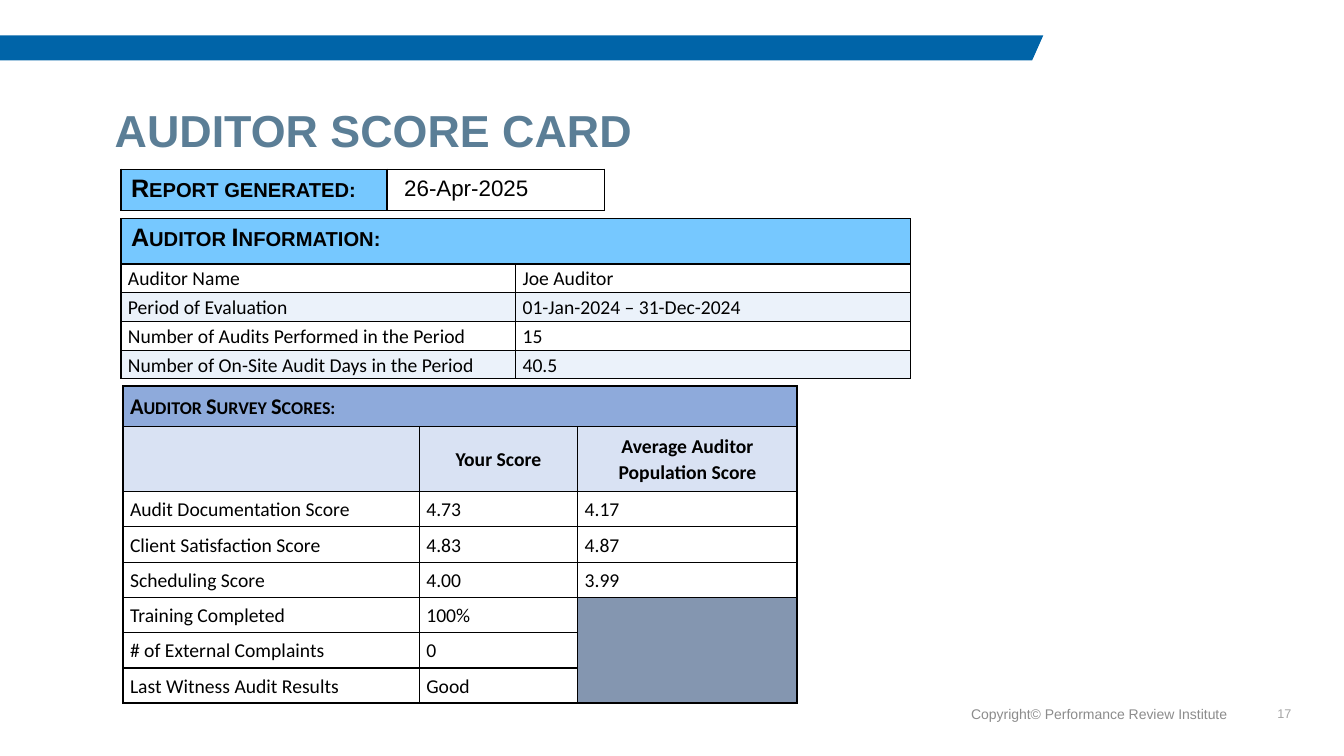
from lxml.etree import SubElement
from pptx import Presentation
from pptx.dml.color import RGBColor
from pptx.enum.text import MSO_ANCHOR, PP_ALIGN
from pptx.oxml.ns import qn
from pptx.util import Inches, Pt

BLACK = RGBColor(0x00, 0x00, 0x00)
BAR_BLUE = RGBColor(0x00, 0x64, 0xA8)
TITLE_BLUE = RGBColor(0x5B, 0x7E, 0x96)
FOOTER_GREY = RGBColor(0x8C, 0x8C, 0x8C)
NUMBER_GREY = RGBColor(0xA5, 0xA5, 0xA5)
SKY = RGBColor(0x76, 0xC8, 0xFF)
PALE = RGBColor(0xEB, 0xF2, 0xFA)
HEADING_BLUE = RGBColor(0x8E, 0xAA, 0xDB)
COLUMN_BLUE = RGBColor(0xD9, 0xE2, 0xF3)
SLATE = RGBColor(0x84, 0x96, 0xB0)

WIDTH, HEIGHT = Inches(13.333), Inches(7.5)

INFORMATION = [
    ("Auditor Name", "Joe Auditor"),
    ("Period of Evaluation", "01-Jan-2024 – 31-Dec-2024"),
    ("Number of Audits Performed in the Period", "15"),
    ("Number of On-Site Audit Days in the Period", "40.5"),
]
SCORES = [
    ("Audit Documentation Score", "4.73", "4.17"),
    ("Client Satisfaction Score", "4.83", "4.87"),
    ("Scheduling Score", "4.00", "3.99"),
    ("Training Completed", "100%"),
    ("# of External Complaints", "0"),
    ("Last Witness Audit Results", "Good"),
]


def across(percent):
    return round(WIDTH * percent / 100)


def down(percent):
    return round(HEIGHT * percent / 100)


def write(frame, text, font="Calibri", size=14, color=BLACK, bold=False,
          small_caps=False, align=PP_ALIGN.LEFT, spacing=1.07):
    para = frame.paragraphs[0]
    para.alignment = align
    para.line_spacing = spacing
    span = para.add_run()
    span.text = text
    span.font.name = font
    span.font.size = Pt(size)
    span.font.bold = bold
    span.font.color.rgb = color
    if small_caps:
        span.font._element.set("cap", "small")


def add_label(page, text, left, top, width, height, **style):
    box = page.shapes.add_textbox(across(left), down(top), across(width), down(height))
    frame = box.text_frame
    frame.word_wrap = True
    frame.vertical_anchor = MSO_ANCHOR.MIDDLE
    frame.margin_top = frame.margin_bottom = 0
    write(frame, text, font="Arial", **style)


def add_bar(page):
    builder = page.shapes.build_freeform(0, down(4.67))
    builder.add_line_segments([(across(77.63), down(4.67)), (across(76.8), down(8)),
                               (0, down(8))], close=True)
    bar = builder.convert_to_shape()
    bar.shadow.inherit = False
    bar.fill.solid()
    bar.fill.fore_color.rgb = BAR_BLUE
    bar.line.fill.background()


def add_grid(page, left, top, columns, rows):
    """Add a table with no style of its own; columns and rows are percentages."""
    frame = page.shapes.add_table(len(rows), len(columns), across(left), down(top),
                                  across(sum(columns)), down(sum(rows)))
    table = frame.table
    table.first_row = table.horz_banding = False
    for column, width in zip(table.columns, columns):
        column.width = across(width)
    for row, height in zip(table.rows, rows):
        row.height = down(height)
    for cell in table.iter_cells():
        cell.fill.background()
        cell.vertical_anchor = MSO_ANCHOR.MIDDLE
        cell.margin_left = cell.margin_right = Inches(0.07)
        cell.margin_top = cell.margin_bottom = 0
    return table


def fill_cell(cell, text="", color=None, **style):
    if color is not None:
        cell.fill.solid()
        cell.fill.fore_color.rgb = color
    if text:
        write(cell.text_frame, text, **style)


def add_banner(cell, text):
    """Fill a sky blue heading cell, set at the top with wider margins."""
    cell.vertical_anchor = MSO_ANCHOR.TOP
    cell.margin_left = cell.margin_right = Inches(0.1)
    cell.margin_top = cell.margin_bottom = Inches(0.05)
    fill_cell(cell, text, SKY, font="Arial", size=18, bold=True, small_caps=True, spacing=1)


def draw_borders(table, outer=1, inner=1):
    last_row, last_column = len(table.rows), len(table.columns)
    for row in range(last_row):
        for column in range(last_column):
            cell = table.cell(row, column)
            at_edge = {
                "a:lnL": column == 0,
                "a:lnR": column + cell.span_width == last_column,
                "a:lnT": row == 0,
                "a:lnB": row + cell.span_height == last_row,
            }
            properties = cell._tc.get_or_add_tcPr()
            for position, (side, edge) in enumerate(at_edge.items()):
                line = SubElement(properties, qn(side), w=str(Pt(outer if edge else inner)))
                paint = SubElement(line, qn("a:solidFill"))
                SubElement(paint, qn("a:srgbClr"), val=str(BLACK))
                properties.insert(position, line)


def add_report_date(page):
    table = add_grid(page, 9, 22.4, [19.8, 16.15], [5.47])
    add_banner(table.cell(0, 0), "Report generated:")
    date = table.cell(0, 1)
    date.vertical_anchor = MSO_ANCHOR.TOP
    date.margin_left = Inches(0.17)
    date.margin_top = Inches(0.07)
    fill_cell(date, "26-Apr-2025", font="Arial", size=16, spacing=1)
    draw_borders(table)


def add_information(page):
    table = add_grid(page, 9, 28.93, [29.36] * 2, [6] + [3.8] * len(INFORMATION))
    table.cell(0, 0).merge(table.cell(0, 1))
    add_banner(table.cell(0, 0), "Auditor Information:")
    for row, entry in enumerate(INFORMATION, 1):
        for column, text in enumerate(entry):
            fill_cell(table.cell(row, column), text, PALE if row % 2 == 0 else None)
    draw_borders(table)


def add_scores(page):
    table = add_grid(page, 9.15, 51.07, [22.05, 11.78, 16.35],
                     [5.36, 8.6] + [4.67] * len(SCORES))
    # Heading and column names
    table.cell(0, 0).merge(table.cell(0, 2))
    fill_cell(table.cell(0, 0), "Auditor Survey Scores:", HEADING_BLUE,
              size=16, bold=True, small_caps=True)
    for column, text in enumerate(["", "Your Score", "Average Auditor Population Score"]):
        fill_cell(table.cell(1, column), text, COLUMN_BLUE, bold=True, align=PP_ALIGN.CENTER)
    # Scores, with one blocked area where no average exists
    for row, entry in enumerate(SCORES, 2):
        for column, text in enumerate(entry):
            fill_cell(table.cell(row, column), text)
    table.cell(5, 2).merge(table.cell(7, 2))
    fill_cell(table.cell(5, 2), color=SLATE)
    draw_borders(table, outer=1.5)


def main():
    deck = Presentation()
    deck.slide_width, deck.slide_height = WIDTH, HEIGHT
    page = deck.slides.add_slide(deck.slide_layouts[6])

    # Bar, title and footer
    add_bar(page)
    add_label(page, "AUDITOR SCORE CARD", 7.8, 13.87, 84.68, 7.33,
              size=32, color=TITLE_BLUE, bold=True, spacing=0.9)
    add_label(page, "Copyright© Performance Review Institute", 71.25, 93.07, 20.78, 2.67,
              size=10, color=FOOTER_GREY, align=PP_ALIGN.RIGHT, spacing=1)
    add_label(page, "17", 92.63, 93.07, 4.2, 2.67,
              size=9, color=NUMBER_GREY, align=PP_ALIGN.RIGHT, spacing=1)

    # Tables
    add_information(page)
    add_report_date(page)
    add_scores(page)

    deck.save("out.pptx")


if __name__ == "__main__":
    main()
